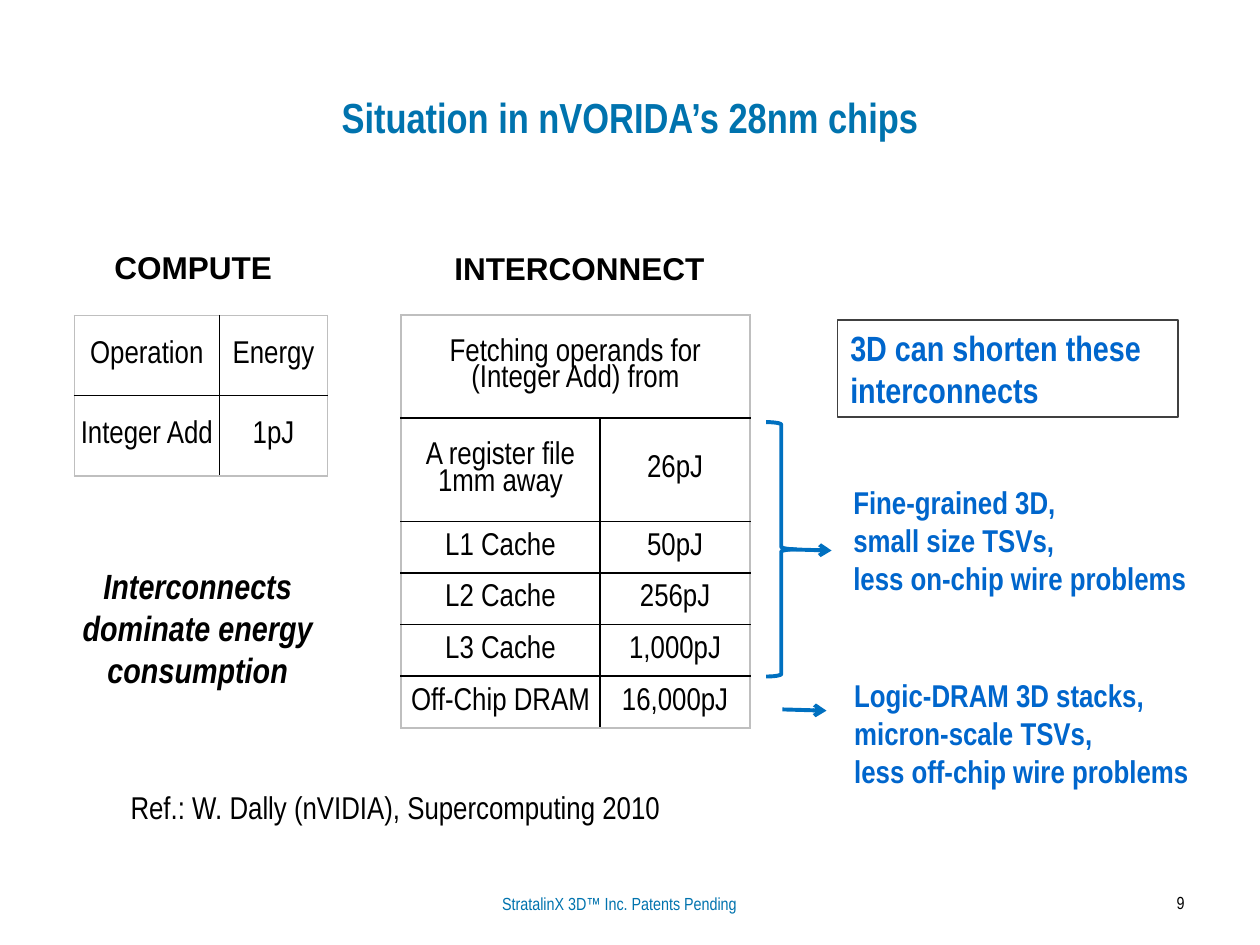
"""Build a slide comparing compute and interconnect energy in 28nm chips."""
from lxml import etree
from pptx import Presentation
from pptx.dml.color import RGBColor
from pptx.enum.shapes import MSO_CONNECTOR, MSO_SHAPE
from pptx.enum.text import MSO_ANCHOR, PP_ALIGN
from pptx.oxml.ns import qn
from pptx.util import Pt

LEFT, CENTER, RIGHT = PP_ALIGN.LEFT, PP_ALIGN.CENTER, PP_ALIGN.RIGHT
TOP, MIDDLE = MSO_ANCHOR.TOP, MSO_ANCHOR.MIDDLE
BLACK = RGBColor(0x00, 0x00, 0x00)
DARK = RGBColor(0x40, 0x40, 0x40)
GRAY = RGBColor(0xBF, 0xBF, 0xBF)
TEAL = RGBColor(0x00, 0x73, 0xAE)
BLUE = RGBColor(0x00, 0x66, 0xCC)
LINE = RGBColor(0x00, 0x70, 0xC0)
NOTE = dict(color=BLUE, bold=True)
HEAD = dict(font="Arial", bold=True)

TEXTS = [
    (["Situation in nVORIDA’s 28nm chips"], (36, 21.6, 648, 90),
     dict(size=24, color=TEAL, bold=True, align=CENTER, anchor=MIDDLE)),
    (["StratalinX 3D™ Inc. Patents Pending"], (239.8, 506.9, 228.2, 18.7),
     dict(size=10, color=TEAL, align=CENTER)),
    (["9"], (604, 506.2, 80, 23.8), dict(size=10, align=RIGHT)),
    (["COMPUTE"], (58.3, 138.2, 151, 28.8), HEAD),
    (["INTERCONNECT"], (252.5, 139, 184, 28.8), HEAD),
    (["Interconnects dominate energy consumption"], (16, 319, 194, 80),
     dict(size=20, bold=True, italic=True, align=CENTER)),
    (["Ref.: W. Dally (nVIDIA), Supercomputing 2010"], (67.5, 446.6, 337, 28.8), {}),
    (["Fine-grained 3D,", "small size TSVs,", "less on-chip wire problems"],
     (480.5, 272.6, 239, 72.7), NOTE),
    (["Logic-DRAM 3D stacks,", "micron-scale TSVs,", "less off-chip wire problems"],
     (481, 383, 239, 72.7), NOTE),
]
CALLOUT = ["3D can shorten these interconnects"]
COMPUTE = [["Operation", "Energy"], ["Integer Add", "1pJ"]]
INTERCONNECT = [
    ["Fetching operands for\n(Integer Add) from", ""],
    ["A register file 1mm away", "26pJ"],
    ["L1 Cache", "50pJ"],
    ["L2 Cache", "256pJ"],
    ["L3 Cache", "1,000pJ"],
    ["Off-Chip DRAM", "16,000pJ"],
]
ARROWS = [(450, 313.9, 475.2, 314.6), (447.1, 405.4, 472.3, 406.1)]


def write(tf, lines, size=18, font="Arial Narrow", color=BLACK, bold=False,
          italic=False, align=LEFT, anchor=TOP, spacing=None):
    tf.word_wrap = True
    tf.vertical_anchor = anchor
    for i, line in enumerate(lines):
        p = tf.paragraphs[0] if i == 0 else tf.add_paragraph()
        p.alignment = align
        p.line_spacing = spacing
        r = p.add_run()
        r.text = line
        f = r.font
        f.size, f.name, f.bold, f.italic = Pt(size), font, bold, italic
        f.color.rgb = color


def add_text(s, lines, box, **fmt):
    write(s.shapes.add_textbox(*map(Pt, box)).text_frame, lines, **fmt)


def set_borders(cell, colors):
    tcPr = cell._tc.get_or_add_tcPr()
    for i, (side, color) in enumerate(zip("LRTB", colors)):
        ln = etree.Element(qn("a:ln" + side), w=str(Pt(1)))
        fill = etree.SubElement(ln, qn("a:solidFill"))
        etree.SubElement(fill, qn("a:srgbClr"), val=str(color))
        tcPr.insert(i, ln)


def add_table(s, rows, left, top, widths, heights, merge_head=False):
    n, m = len(rows), len(widths)
    frame = s.shapes.add_table(n, m, Pt(left), Pt(top), Pt(sum(widths)), Pt(sum(heights)))
    table = frame.table
    table.first_row = table.horz_banding = False
    for col, width in zip(table.columns, widths):
        col.width = Pt(width)
    for row, height in zip(table.rows, heights):
        row.height = Pt(height)
    if merge_head:
        table.cell(0, 0).merge(table.cell(0, m - 1))
    for i, row in enumerate(rows):
        for j, text in enumerate(row):
            cell = table.cell(i, j)
            cell.fill.background()
            cell.margin_left = cell.margin_right = cell.margin_top = cell.margin_bottom = 0
            cell.vertical_anchor = MIDDLE
            last = m - 1 in (j, j + cell.span_width - 1)
            edges = (j == 0, last, i == 0, i == n - 1)
            set_borders(cell, [GRAY if edge else BLACK for edge in edges])
            if text:
                write(cell.text_frame, text.split("\n"), align=CENTER, anchor=MIDDLE,
                      spacing=0.9)


def add_shape(s, kind, box, color, width):
    sp = s.shapes.add_shape(kind, *map(Pt, box))
    sp.shadow.inherit = False
    sp.fill.background()
    sp.line.color.rgb = color
    sp.line.width = Pt(width)
    return sp


def add_arrow(s, ends):
    c = s.shapes.add_connector(MSO_CONNECTOR.STRAIGHT, *map(Pt, ends))
    c.line.color.rgb = LINE
    c.line.width = Pt(2.25)
    etree.SubElement(c.line._get_or_add_ln(), qn("a:tailEnd"), type="arrow")
    etree.SubElement(c._element.spPr, qn("a:effectLst"))


def main():
    prs = Presentation()
    prs.slide_width, prs.slide_height = Pt(720), Pt(540)
    s = prs.slides.add_slide(prs.slide_layouts[6])
    for lines, box, fmt in TEXTS:
        add_text(s, lines, box, **fmt)
    add_table(s, COMPUTE, 42.5, 180.3, [82.8, 62], [45.8] * 2)
    add_table(s, INTERCONNECT, 229, 180, [114, 85.6], [59] * 2 + [29.5] * 4, merge_head=True)
    add_shape(s, MSO_SHAPE.RIGHT_BRACE, (437.8, 241.2, 17.3, 145.4), LINE, 2.25)
    for ends in ARROWS:
        add_arrow(s, ends)
    sp = add_shape(s, MSO_SHAPE.RECTANGLE, (478.8, 182.9, 194.4, 55.4), DARK, 0.75)
    write(sp.text_frame, CALLOUT, size=20, **NOTE)
    prs.save("out.pptx")


if __name__ == "__main__":
    main()
